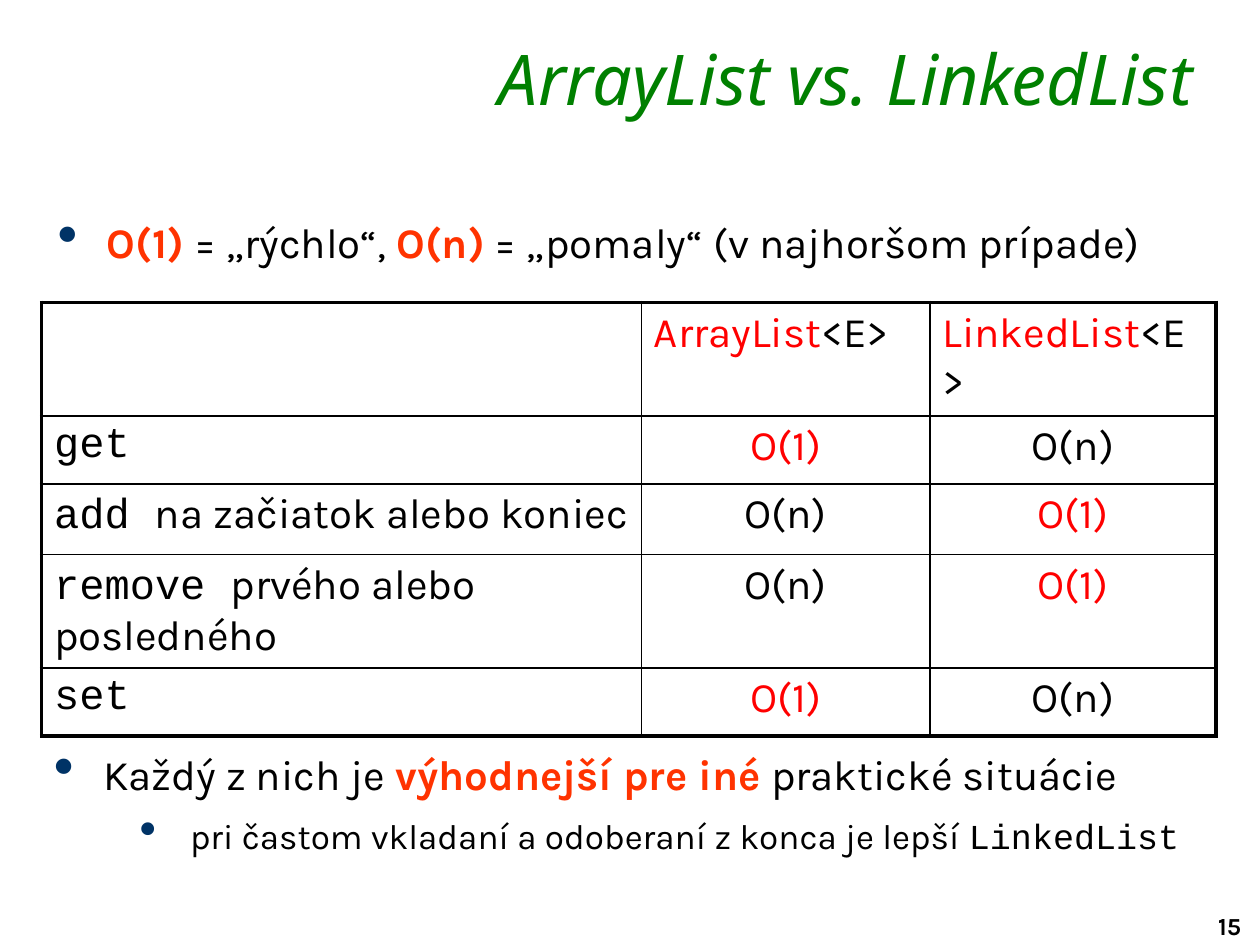
from dataclasses import dataclass

import lxml.etree
import pptx
import pptx.dml.color
import pptx.enum.text
import pptx.oxml.ns
import pptx.util

COLUMNS, ROWS = 100, 75  # the slide grid; one cell is 0.1 inch square
CELL = pptx.util.Inches(0.1)
ALIGN = pptx.enum.text.PP_ALIGN


@dataclass(frozen=True)
class Theme:
    title_font: str = "Noto Sans"
    body_font: str = "Karla"
    code_font: str = "Courier New"
    title_size: int = 40
    body_size: int = 24
    detail_size: int = 20
    number_size: int = 14
    text: str = "000000"
    title: str = "008000"
    strong: str = "FF3300"
    fast: str = "FF0000"
    bullet: str = "003366"
    outer_line: float = 2.25
    inner_line: float = 1


THEME = Theme()


@dataclass(frozen=True)
class Box:
    """A region in grid columns and rows."""
    left: float
    top: float
    width: float
    height: float

    def lengths(self):
        return [grid(value) for value in (self.left, self.top, self.width, self.height)]


@dataclass(frozen=True)
class Piece:
    """A stretch of text whose style may differ from its paragraph."""
    text: str
    color: str = THEME.text
    bold: bool = False
    code: bool = False


def grid(value):
    return round(value * CELL)


def strong(text):
    return Piece(text, THEME.strong, bold=True)


def fast(text):
    return Piece(text, THEME.fast)


def code(text):
    return Piece(text, code=True)


def style(font, size, color, name=THEME.body_font, bold=False, italic=False):
    font.size = pptx.util.Pt(size)
    font.name = name
    font.bold = bold
    font.italic = italic
    font.color.rgb = pptx.dml.color.RGBColor.from_string(color)


def write_pieces(paragraph, pieces, size):
    for piece in pieces:
        run = paragraph.add_run()
        run.text = piece.text
        name = THEME.code_font if piece.code else THEME.body_font
        style(run.font, size, piece.color, name, piece.bold)


def add_text_frame(slide, box):
    frame = slide.shapes.add_textbox(*box.lengths()).text_frame
    frame.word_wrap = True
    return frame


def add_element(parent, tag, **attributes):
    element = lxml.etree.SubElement(parent, pptx.oxml.ns.qn(tag))
    for name, value in attributes.items():
        element.set(name, str(value))
    return element


def add_bullet(paragraph, indent, hanging):
    properties = paragraph._p.get_or_add_pPr()
    properties.set("marL", str(grid(indent)))
    properties.set("indent", str(-grid(hanging)))
    color = add_element(properties, "a:buClr")
    add_element(color, "a:srgbClr", val=THEME.bullet)
    add_element(properties, "a:buSzPct", val=140000)
    add_element(properties, "a:buChar", char="•")


# Title, right aligned at the top
def add_title(slide, box, text):
    frame = add_text_frame(slide, box)
    frame.margin_top = frame.margin_bottom = 0
    paragraph = frame.paragraphs[0]
    paragraph.text = text
    paragraph.alignment = ALIGN.RIGHT
    style(paragraph.font, THEME.title_size, THEME.title, THEME.title_font, italic=True)


# Bulleted text: each item is a level and its pieces
def add_bullets(slide, box, items):
    levels = [(THEME.body_size, 3.9, 3.9), (THEME.detail_size, 10.8, 4)]
    frame = add_text_frame(slide, box)
    for index, (level, pieces) in enumerate(items):
        size, indent, hanging = levels[level]
        paragraph = frame.add_paragraph() if index else frame.paragraphs[0]
        paragraph.level = level
        add_bullet(paragraph, indent, hanging)
        if index:
            paragraph.space_before = pptx.util.Pt(0.2 * size)
        paragraph.space_after = pptx.util.Pt(0.2 * size)
        write_pieces(paragraph, pieces, size)


def set_borders(cell, outer_sides):
    properties = cell._tc.get_or_add_tcPr()
    for position, side in enumerate("LRTB"):
        width = THEME.outer_line if side in outer_sides else THEME.inner_line
        line = lxml.etree.Element(pptx.oxml.ns.qn(f"a:ln{side}"), w=str(pptx.util.Pt(width)))
        add_element(add_element(line, "a:solidFill"), "a:srgbClr", val=THEME.text)
        properties.insert(position, line)


# Comparison table: heavy frame, thin inner lines, centred values
def add_comparison(slide, box, column_widths, row_heights, content):
    last_row, last_column = len(row_heights) - 1, len(column_widths) - 1
    table = slide.shapes.add_table(last_row + 1, last_column + 1, *box.lengths()).table
    table.first_row = table.horz_banding = False
    for column, width in zip(table.columns, column_widths):
        column.width = grid(width)
    for row, height in zip(table.rows, row_heights):
        row.height = grid(height)
    for row, cells in enumerate(content):
        for column, pieces in enumerate(cells):
            cell = table.cell(row, column)
            cell.fill.background()
            edges = {"L": column == 0, "R": column == last_column,
                     "T": row == 0, "B": row == last_row}
            set_borders(cell, [side for side, outer in edges.items() if outer])
            paragraph = cell.text_frame.paragraphs[0]
            if row and column:
                paragraph.alignment = ALIGN.CENTER
            write_pieces(paragraph, pieces, THEME.body_size)


# Slide number in the bottom right corner
def add_slide_number(slide, box, number):
    frame = add_text_frame(slide, box)
    frame.word_wrap = False
    paragraph = frame.paragraphs[0]
    paragraph.text = str(number)
    style(paragraph.font, THEME.number_size, THEME.text, bold=True)


def main():
    presentation = pptx.Presentation()
    presentation.slide_width = grid(COLUMNS)
    presentation.slide_height = grid(ROWS)
    slide = presentation.slides.add_slide(presentation.slide_layouts[6])

    add_slide_number(slide, Box(95.7, 71.8, 5.1, 3.3), 15)
    add_title(slide, Box(20.1, 2.8, 75.5, 5.8), "ArrayList vs. LinkedList")
    add_bullets(slide, Box(3.6, 16.7, 92.2, 6), [
        (0, [strong("O(1)"), Piece(" = „rýchlo“, "), strong("O(n)"),
             Piece(" = „pomaly“ (v najhoršom prípade)")]),
    ])

    constant, linear = [fast("O(1)")], [Piece("O(n)")]
    column_widths, row_heights = [47.6, 22.9, 22.7], [8.8, 5.4, 5.6, 8.9, 5.4]
    add_comparison(
        slide, Box(3.3, 24, sum(column_widths), sum(row_heights)), column_widths, row_heights, [
            [[], [fast("ArrayList"), Piece("<E>")], [fast("LinkedList"), Piece("<E>")]],
            [[code("get")], constant, linear],
            [[code("add "), Piece("na začiatok alebo koniec")], linear, constant],
            [[code("remove "), Piece("prvého alebo posledného")], linear, constant],
            [[code("set")], constant, linear],
        ])

    add_bullets(slide, Box(3.3, 58.9, 92.5, 10), [
        (0, [Piece("Každý z nich je "), strong("výhodnejší pre iné "),
             Piece("praktické situácie")]),
        (1, [Piece("pri častom vkladaní a odoberaní z konca je lepší "), code("LinkedList")]),
    ])
    presentation.save("out.pptx")


if __name__ == "__main__":
    main()
